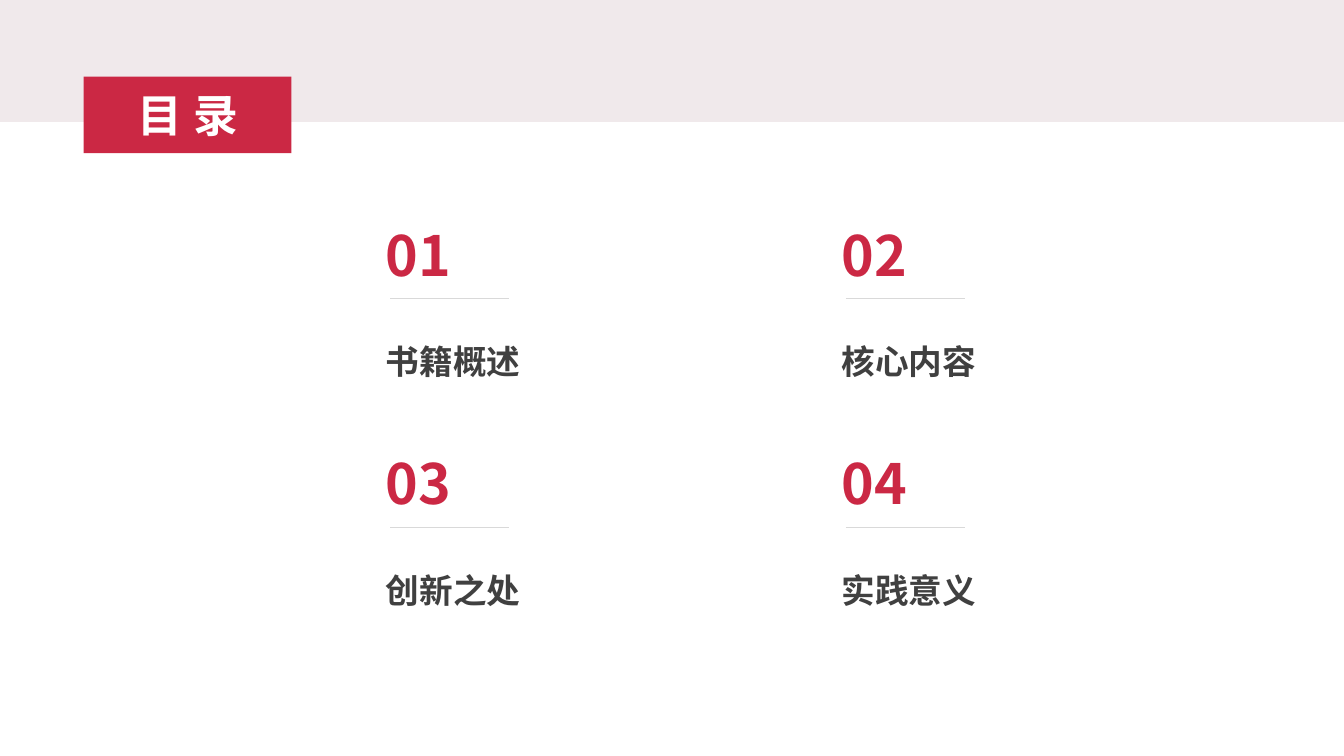
from lxml import etree
from pptx import Presentation
from pptx.dml.color import RGBColor
from pptx.enum.shapes import MSO_CONNECTOR, MSO_SHAPE
from pptx.enum.text import MSO_ANCHOR, MSO_AUTO_SIZE, PP_ALIGN
from pptx.oxml.ns import qn
from pptx.util import Inches, Pt

RECT = MSO_SHAPE.RECTANGLE
LINE = MSO_CONNECTOR.STRAIGHT
MIDDLE = MSO_ANCHOR.MIDDLE
FIXED = MSO_AUTO_SIZE.NONE
LEFT, CENTER, JUSTIFY = PP_ALIGN.LEFT, PP_ALIGN.CENTER, PP_ALIGN.JUSTIFY

FONT = "Noto Sans CJK SC"
RED, PALE, GREY, DARK, WHITE = "CB2844", "F0E9EB", "D9D9D9", "404040", "FFFFFF"


def paint(color, code):
    color.rgb = RGBColor.from_string(code)


class Deck:
    """Holds the style and the current slide, and draws each kind of element."""

    def __init__(self, show):
        self.slide = show.slides.add_slide(show.slide_layouts[5])
        self.shapes = self.slide.shapes

    def letter(self, shape, words, size, code, align=LEFT):
        frame = shape.text_frame
        frame.text = words
        frame.word_wrap = True
        frame.auto_size = FIXED
        para = frame.paragraphs[0]
        para.alignment = align
        font = para.runs[0].font
        font.name, font.size, font.bold = FONT, Pt(size), True
        paint(font.color, code)
        for props in shape.element.iter(qn("a:rPr")):
            etree.SubElement(props, qn("a:ea"), typeface=FONT)
        return para

    def fill(self, shape, code):
        shape.fill.solid()
        paint(shape.fill.fore_color, code)

    def band(self, wide, high, code):
        shape = self.shapes.add_shape(RECT, 0, 0, Inches(wide), Inches(high))
        shape.shadow.inherit = False
        shape.line.fill.background()
        self.fill(shape, code)

    def title(self, words, left, top, wide, high):
        shape = self.shapes.title
        shape.left, shape.top = Inches(left), Inches(top)
        shape.width, shape.height = Inches(wide), Inches(high)
        self.fill(shape, RED)
        self.letter(shape, words, 32, WHITE, CENTER)
        shape.text_frame.vertical_anchor = MIDDLE
        for props in shape.element.iter(qn("a:rPr")):
            props.set("spc", "800")
        shape.element.getparent().append(shape.element)

    def text(self, words, left, top, wide, high, size, code, align=LEFT):
        box = self.shapes.add_textbox(
            Inches(left), Inches(top), Inches(wide), Inches(high))
        return self.letter(box, words, size, code, align)

    def rule(self, left, top, wide):
        line = self.shapes.add_connector(
            LINE, Inches(left), Inches(top), Inches(left + wide), Inches(top))
        line.line.width = Pt(0.5)
        paint(line.line.color, GREY)
        for props in line.element.iter(qn("p:spPr")):
            etree.SubElement(props, qn("a:effectLst"))

    def entry(self, mark, name, left, top):
        label = self.text(name, left, top + 0.99, 3.54, 1.05, 24, DARK, JUSTIFY)
        label.line_spacing = 1.5
        label.space_after = Pt(20)
        self.text(mark, left, top, 0.89, 0.84, 39.6, RED)
        self.rule(left + 0.14, top + 0.82, 1.18)


def main():
    show = Presentation()
    show.slide_width, show.slide_height = Inches(13.33), Inches(7.5)
    deck = Deck(show)
    deck.band(13.33, 1.21, PALE)
    names = ["书籍概述", "核心内容", "创新之处", "实践意义"]
    for spot, name in enumerate(names):
        row, col = divmod(spot, 2)
        deck.entry(f"{spot + 1:02}", name, 3.73 + col * 4.52, 2.14 + row * 2.27)
    deck.title("目录", 0.83, 0.76, 2.06, 0.76)
    show.save("out.pptx")


if __name__ == "__main__":
    main()
